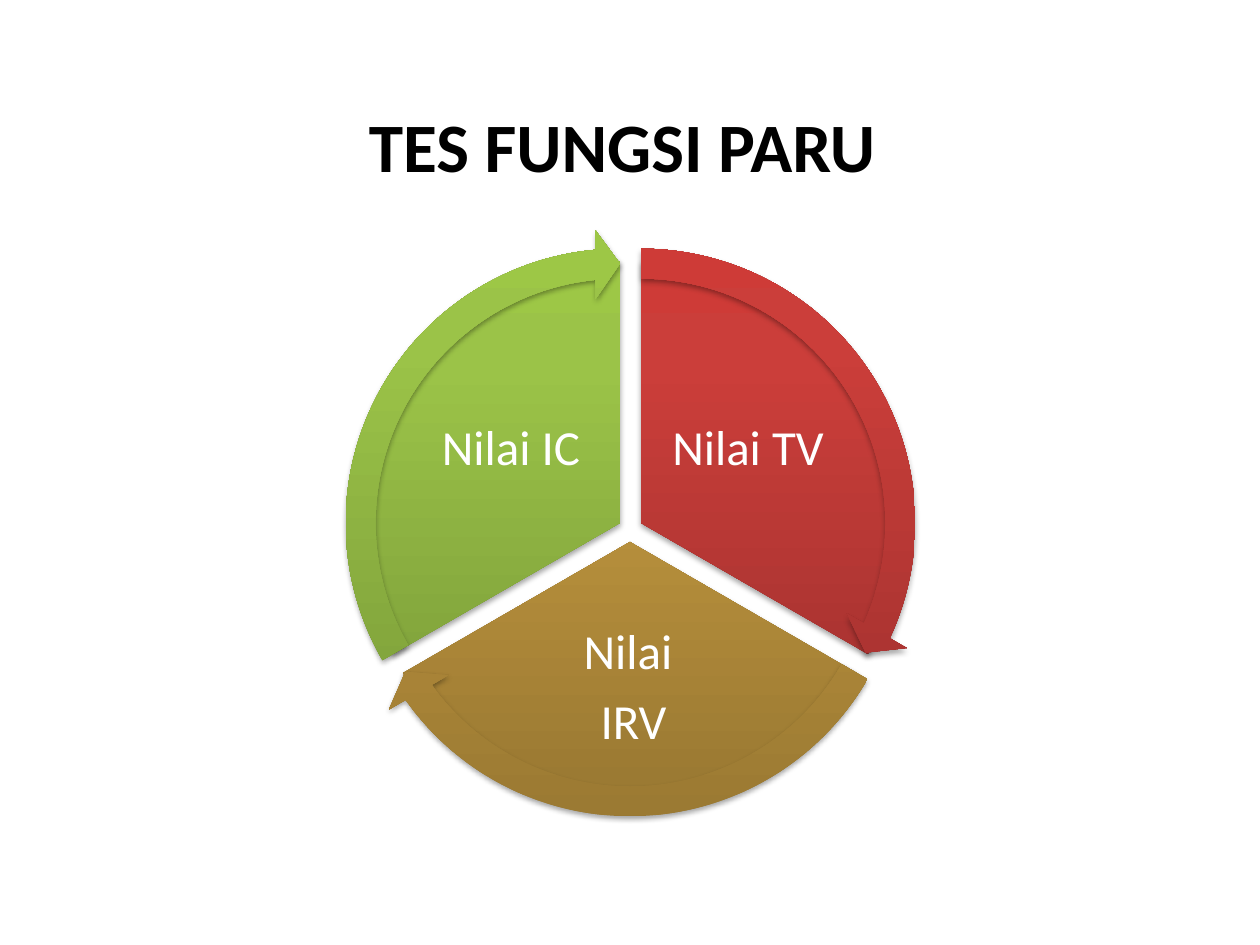
from copy import deepcopy
from lxml import etree
from pptx import Presentation
from pptx import util as u
from pptx.dml.color import RGBColor
from pptx.enum import shapes, text
from pptx.oxml.ns import qn

KIND = shapes.MSO_SHAPE
EMU = 914400 / 126


def px(n):
    return u.Emu(round(n * EMU))


def rgb(code):
    return RGBColor.from_string(code)


class Deck:
    """Holds the font and the current slide, and draws each kind of element."""

    def __init__(self, font):
        self.font = font
        self.show = Presentation()
        self.show.slide_width, self.show.slide_height = px(1260), px(945)
        self.slide = self.show.slides.add_slide(self.show.slide_layouts[6])

    def label(self, box, lines, size, color, bold=False, inset=5, lead=0.9, after=9.8):
        frame = self.slide.shapes.add_textbox(*map(px, box)).text_frame
        frame.word_wrap = True
        frame.vertical_anchor = text.MSO_ANCHOR.MIDDLE
        frame.margin_left = frame.margin_right = px(inset)
        frame.margin_top = frame.margin_bottom = px(inset)
        frame.text = "\n".join(lines)
        for para in frame.paragraphs:
            para.alignment = text.PP_ALIGN.CENTER
            para.line_spacing = lead
            para.space_after = u.Pt(after)
            para.font.name, para.font.size = self.font, u.Pt(size)
            para.font.bold = bold
            para.font.color.rgb = rgb(color)

    def shape(self, kind, left, top, side, turns, shades):
        item = self.slide.shapes.add_shape(kind, px(left), px(top), px(side), px(side))
        for i, turn in enumerate(turns):
            item.adjustments[i] = turn
        item.line.fill.background()
        self.blend(item, shades)
        self.shade(item)

    def blend(self, item, shades):
        item.fill.gradient()
        item.fill.gradient_angle = 90
        stops = item._element.spPr.find(".//" + qn("a:gsLst"))
        stops.append(deepcopy(stops[-1]))
        for stop, place, color in zip(item.fill.gradient_stops, (0, 0.8, 1), shades):
            stop.position = place
            stop.color.rgb = rgb(color)

    def shade(self, item):
        item.shadow.inherit = False
        effect = item._element.spPr.find(qn("a:effectLst"))
        outer = etree.SubElement(effect, qn("a:outerShdw"), blurRad="40000",
                                 dist="23000", dir="5400000", rotWithShape="0")
        color = etree.SubElement(outer, qn("a:srgbClr"), val="000000")
        etree.SubElement(color, qn("a:alpha"), val="35000")


def main():
    deck = Deck("Calibri")
    deck.label((63, 94, 1134, 101), ["TES FUNGSI PARU "], 39.6, "000000",
               bold=True, inset=8, lead=1.0, after=0)
    pie, ring = 524, 588
    edge = (ring - pie) // 2
    parts = [
        (379, 261, (162, 18), (14.725, 161.994), ("9C2F2D", "CB3E3A", "CE3B37"),
         (655, 372, 186, 156), ["Nilai TV"]),
        (368, 280, (18, 90), (86.72, 18.005), ("997832", "C79C41", "CB9D3F"),
         (493, 620, 281, 137), ["Nilai ", "IRV"]),
        (358, 261, (90, 162), (158.73, 90), ("779737", "9BC348", "9DC746"),
         (418, 372, 186, 156), ["Nilai IC"]),
    ]
    for left, top, turns, _, shades, box, lines in parts:
        deck.shape(KIND.PIE, left, top, pie, turns, shades)
        deck.label(box, lines, 28, "FFFFFF")
    for left, top, _, sweep, shades, _, _ in parts:
        deck.shape(KIND.CIRCULAR_ARROW, left - edge, top - edge, ring,
                   (0.051, 3.275, *sweep, 0.059), shades)
    deck.show.save("out.pptx")


if __name__ == "__main__":
    main()
